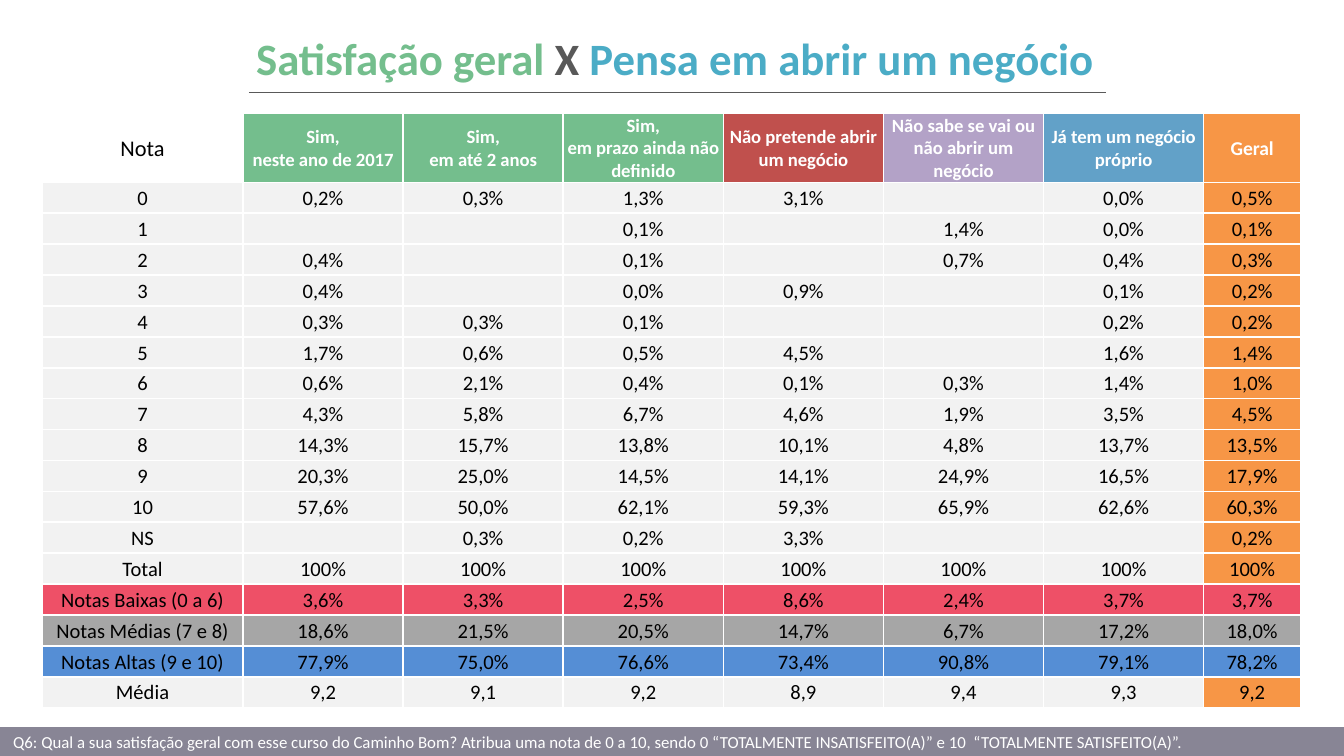
from pptx import Presentation
from pptx.dml.color import RGBColor as Rgb
from pptx.enum.shapes import MSO_CONNECTOR as Link, MSO_SHAPE as Form
from pptx.enum.text import MSO_ANCHOR as Anchor, MSO_AUTO_SIZE as Auto, PP_ALIGN as Align
from pptx.oxml.ns import qn
from pptx.util import Pt
from lxml.etree import SubElement as Sub


def hue(code):
    return Rgb.from_string(code)


def write(para, text, size, code, bold=False):
    run = para.add_run()
    run.text = text
    font = run.font
    font.name, font.size, font.bold = "Calibri", Pt(size), bold
    font.color.rgb = hue(code)


deck = Presentation()
deck.slide_width, deck.slide_height = Pt(720), Pt(405)
slide = deck.slides.add_slide(deck.slide_layouts[5])
shapes = slide.shapes

title = shapes.title
title.left, title.top, title.width, title.height = Pt(3), Pt(13), Pt(717), Pt(36)
frame = title.text_frame
frame.auto_size = Auto.NONE
frame.word_wrap = True
frame.vertical_anchor = Anchor.TOP
para = frame.paragraphs[0]
para.alignment = Align.CENTER
for text, code in [
    ("Satisfação geral ", "74BE8D"),
    ("X ", "595959"),
    ("Pensa em abrir um negócio", "4BACC6"),
]:
    write(para, text, 24, code, True)

rule = shapes.add_connector(Link.STRAIGHT, Pt(133.3), Pt(49.7), Pt(592.5), Pt(49.7))
rule.line.color.rgb = hue("595959")
rule.line.width = Pt(0.75)
Sub(rule._element.spPr, qn("a:effectLst"))

foot = shapes.add_shape(Form.RECTANGLE, Pt(0), Pt(389.5), Pt(720), Pt(15.5))
foot.shadow.inherit = False
foot.fill.solid()
foot.fill.fore_color.rgb = hue("888595")
foot.line.fill.background()
frame = foot.text_frame
frame.word_wrap = True
frame.vertical_anchor = Anchor.MIDDLE
para = frame.paragraphs[0]
para.alignment = Align.LEFT
write(
    para,
    "Q6: Qual a sua satisfação geral com esse curso do Caminho Bom? "
    "Atribua uma nota de 0 a 10, sendo 0 “TOTALMENTE INSATISFEITO(A)” "
    "e 10  “TOTALMENTE SATISFEITO(A)”.",
    9, "FFFFFF",
)

heads = [
    ("Nota", None),
    ("Sim,\nneste ano de 2017", "74BE8D"),
    ("Sim,\nem até 2 anos", "74BE8D"),
    ("Sim,\nem prazo ainda não definido", "74BE8D"),
    ("Não pretende abrir um negócio", "C0504D"),
    ("Não sabe se vai ou não abrir um negócio", "B3A2C7"),
    ("Já tem um negócio próprio", "62A1C8"),
    ("Geral", "F79646"),
]
data = [
    ["0", "0,2%", "0,3%", "1,3%", "3,1%", "", "0,0%", "0,5%"],
    ["1", "", "", "0,1%", "", "1,4%", "0,0%", "0,1%"],
    ["2", "0,4%", "", "0,1%", "", "0,7%", "0,4%", "0,3%"],
    ["3", "0,4%", "", "0,0%", "0,9%", "", "0,1%", "0,2%"],
    ["4", "0,3%", "0,3%", "0,1%", "", "", "0,2%", "0,2%"],
    ["5", "1,7%", "0,6%", "0,5%", "4,5%", "", "1,6%", "1,4%"],
    ["6", "0,6%", "2,1%", "0,4%", "0,1%", "0,3%", "1,4%", "1,0%"],
    ["7", "4,3%", "5,8%", "6,7%", "4,6%", "1,9%", "3,5%", "4,5%"],
    ["8", "14,3%", "15,7%", "13,8%", "10,1%", "4,8%", "13,7%", "13,5%"],
    ["9", "20,3%", "25,0%", "14,5%", "14,1%", "24,9%", "16,5%", "17,9%"],
    ["10", "57,6%", "50,0%", "62,1%", "59,3%", "65,9%", "62,6%", "60,3%"],
    ["NS", "", "0,3%", "0,2%", "3,3%", "", "", "0,2%"],
    ["Total"] + ["100%"] * 7,
    ["Notas Baixas (0 a 6)", "3,6%", "3,3%", "2,5%", "8,6%", "2,4%", "3,7%", "3,7%"],
    ["Notas Médias (7 e 8)", "18,6%", "21,5%", "20,5%", "14,7%", "6,7%", "17,2%", "18,0%"],
    ["Notas Altas (9 e 10)", "77,9%", "75,0%", "76,6%", "73,4%", "90,8%", "79,1%", "78,2%"],
    ["Média", "9,2", "9,1", "9,2", "8,9", "9,4", "9,3", "9,2"],
]
bands = {14: "EE5067", 15: "A6A6A6", 16: "558ED5"}
rows = [[text for text, code in heads]] + data
last = len(heads) - 1

grid = shapes.add_table(len(rows), len(heads), Pt(22.6), Pt(60.6), Pt(675), Pt(318)).table
grid.first_row = grid.horz_banding = False
for col, wide in zip(grid.columns, [107.6] + [85.8] * 6 + [52]):
    col.width = Pt(wide)
for row, high in zip(grid.rows, [31] + [16.56] * len(data)):
    row.height = Pt(high)

for r, row in enumerate(rows):
    for c, text in enumerate(row):
        cell = grid.cell(r, c)
        cell.vertical_anchor = Anchor.MIDDLE
        cell.margin_left = cell.margin_right = cell.margin_top = Pt(0.7)
        cell.margin_bottom = Pt(0)
        size, ink, bold = 11, "000000", False
        if r == 0:
            back = heads[c][1]
            size = 12 if c == 0 else 10.5 if c == last else 10
            if c:
                ink, bold = "FFFFFF", True
        else:
            back = bands.get(r, "F79646" if c == last else "F2F2F2")
        if back:
            cell.fill.solid()
            cell.fill.fore_color.rgb = hue(back)
        else:
            cell.fill.background()
        frame = cell.text_frame
        for i, part in enumerate(text.split("\n")):
            para = frame.add_paragraph() if i else frame.paragraphs[0]
            para.alignment = Align.CENTER
            if part:
                write(para, part, size, ink, bold)
            else:
                Sub(para._p, qn("a:endParaRPr"), sz="1100")

deck.save("out.pptx")
